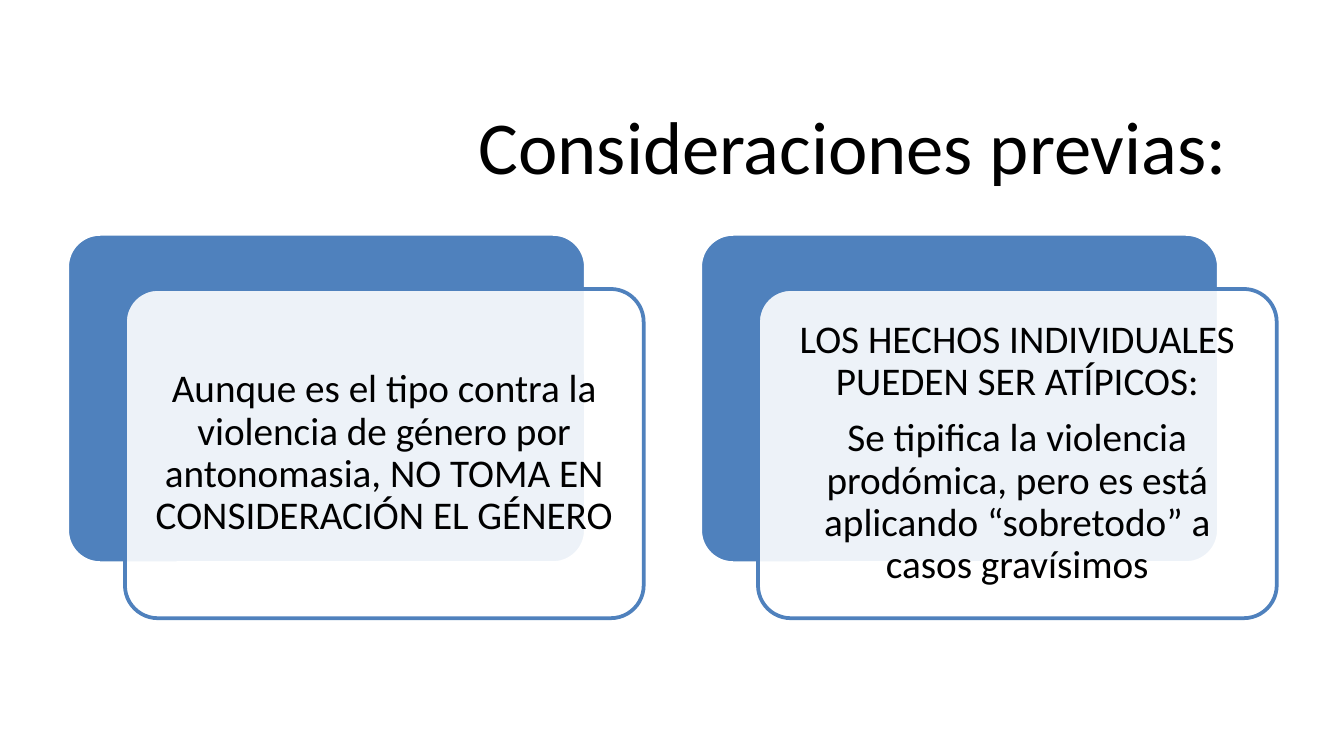
from dataclasses import dataclass

from lxml.etree import SubElement
from pptx import Presentation
from pptx.dml.color import RGBColor
from pptx.enum.shapes import MSO_SHAPE
from pptx.enum.text import MSO_ANCHOR, MSO_AUTO_SIZE, PP_ALIGN
from pptx.oxml.ns import qn
from pptx.shapes.autoshape import Shape
from pptx.slide import Slide
from pptx.text.text import TextFrame
from pptx.util import Inches, Pt


@dataclass(frozen=True)
class Theme:
    font: str = "Calibri"
    ink: RGBColor = RGBColor(0, 0, 0)
    blue: RGBColor = RGBColor(0x4F, 0x81, 0xBD)
    white: RGBColor = RGBColor(0xFF, 0xFF, 0xFF)
    head: int = 40
    body: int = 21
    line: int = 2
    round: float = 0.1
    opaque: int = 90


@dataclass(frozen=True)
class Grid:
    width: float = 10
    height: float = 10 * 9 / 16
    left: float = 0.5
    top: float = 1.74
    step: float = 4.71
    wide: float = 3.86
    high: float = 2.45
    shift_x: float = 0.43
    shift_y: float = 0.41
    inset: float = 0.09


@dataclass(frozen=True)
class Card:
    col: int
    lines: tuple[str, ...]


THEME = Theme()
GRID = Grid()
CARDS = (
    Card(0, (
        "Aunque es el tipo contra la violencia de género por antonomasia, "
        "NO TOMA EN CONSIDERACIÓN EL GÉNERO",
    )),
    Card(1, (
        "LOS HECHOS INDIVIDUALES PUEDEN SER ATÍPICOS:",
        "Se tipifica la violencia prodómica, pero es está aplicando "
        "“sobretodo” a casos gravísimos",
    )),
)


def write(frame: TextFrame, lines: tuple[str, ...], size: int,
          anchor: MSO_ANCHOR) -> None:
    frame.word_wrap = True
    frame.auto_size = MSO_AUTO_SIZE.NONE
    frame.vertical_anchor = anchor
    frame.text = "\n".join(lines)
    for par in frame.paragraphs:
        par.alignment = PP_ALIGN.CENTER
        par.font.name = THEME.font
        par.font.size = Pt(size)
        par.font.color.rgb = THEME.ink


def add_panel(slide: Slide, left: float, top: float,
              fill: RGBColor, edge: RGBColor) -> Shape:
    panel = slide.shapes.add_shape(
        MSO_SHAPE.ROUNDED_RECTANGLE,
        Inches(left), Inches(top), Inches(GRID.wide), Inches(GRID.high))
    panel.adjustments[0] = THEME.round
    panel.shadow.inherit = False
    panel.fill.solid()
    panel.fill.fore_color.rgb = fill
    panel.line.color.rgb = edge
    panel.line.width = Pt(THEME.line)
    return panel


def fade(panel: Shape, share: int) -> None:
    color = panel.element.spPr.find(qn("a:solidFill"))[0]
    SubElement(color, qn("a:alpha")).set("val", str(share * 1000))


def add_card(slide: Slide, card: Card) -> None:
    left = GRID.left + card.col * GRID.step
    add_panel(slide, left, GRID.top, THEME.blue, THEME.white)
    front = add_panel(slide, left + GRID.shift_x, GRID.top + GRID.shift_y,
                      THEME.white, THEME.blue)
    fade(front, THEME.opaque)
    frame = front.text_frame
    frame.margin_left = frame.margin_right = Inches(GRID.inset)
    frame.margin_top = frame.margin_bottom = Inches(GRID.inset)
    write(frame, card.lines, THEME.body, MSO_ANCHOR.MIDDLE)
    for par in frame.paragraphs:
        par.line_spacing = 0.9
        par.space_after = Pt(0.35 * THEME.body)


def add_title(slide: Slide, text: str) -> None:
    title = slide.shapes.title
    title.left, title.top = Inches(3.19), Inches(0.69)
    title.width, title.height = Inches(6.31), Inches(0.94)
    write(title.text_frame, (text,), THEME.head, MSO_ANCHOR.TOP)


def main() -> None:
    deck = Presentation()
    deck.slide_width = Inches(GRID.width)
    deck.slide_height = Inches(GRID.height)
    slide = deck.slides.add_slide(deck.slide_layouts.get_by_name("Title Only"))
    add_title(slide, "Consideraciones previas:")
    for card in CARDS:
        add_card(slide, card)
    deck.save("out.pptx")


if __name__ == "__main__":
    main()
